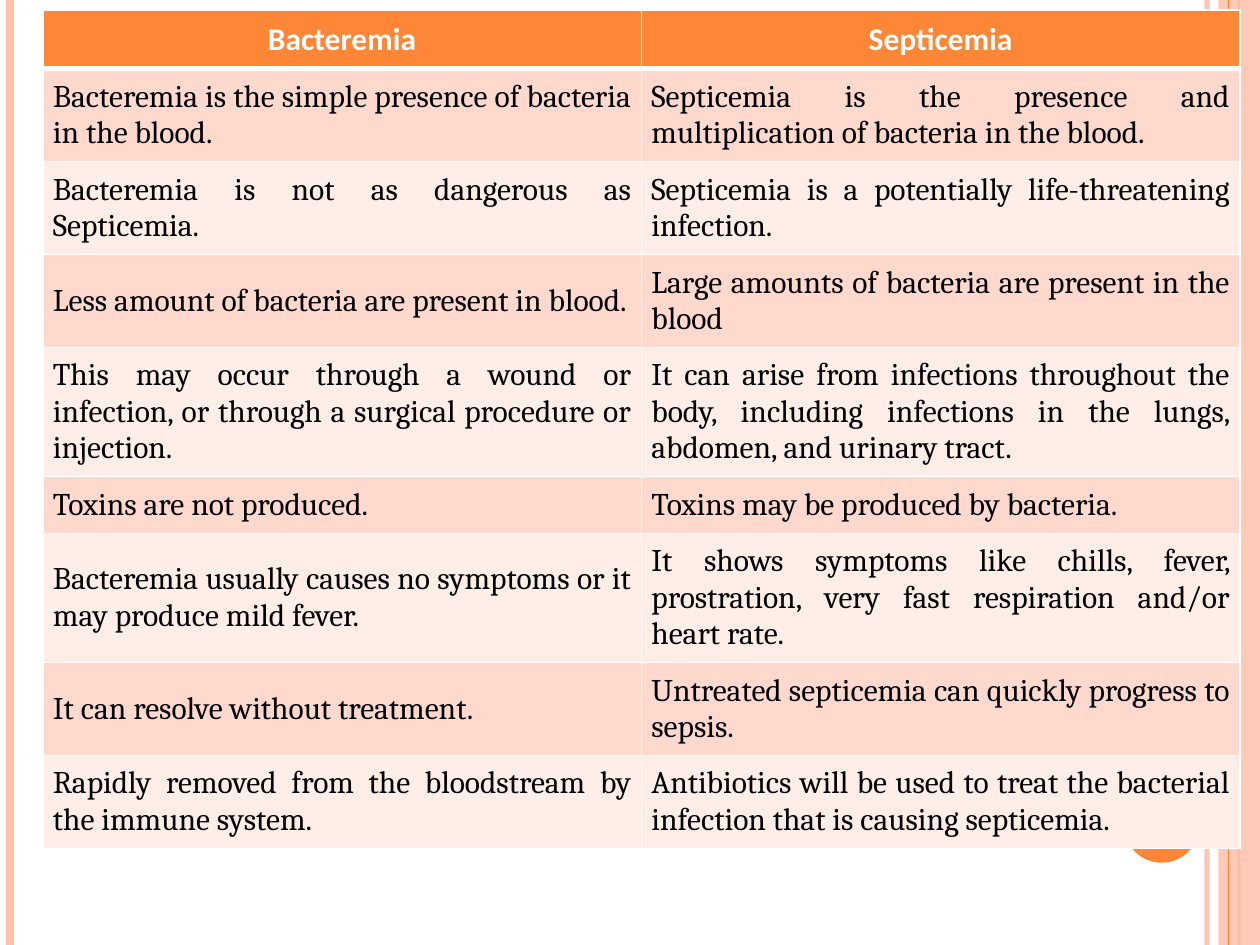
from lxml import etree
from pptx import Presentation
from pptx import util as u
from pptx.dml.color import RGBColor
from pptx.enum import shapes, text
from pptx.oxml import ns

W, H = u.Inches(10), u.Inches(7.5)
ORANGE, PEACH, WHITE, BLACK = "FE8637", "FEC3AE", "FFFFFF", "000000"
BANDS = ["FFD9CE", "FFEDE8"]
RULES = [(0.958, PEACH, 3, 93), (0.008, PEACH, 4.5, 100), (0.983, ORANGE, 1.5, 100)]
EDGE_RULE = (0.975, ORANGE, 0.75, 100)
ROWS = [
    ("Bacteremia", "Septicemia"),
    ("Bacteremia is the simple presence of bacteria in the blood.",
     "Septicemia is the presence and multiplication of bacteria in the blood."),
    ("Bacteremia is not as dangerous as Septicemia.",
     "Septicemia is a potentially life-threatening infection."),
    ("Less amount of bacteria are present in blood.",
     "Large amounts of bacteria are present in the blood"),
    ("This may occur through a wound or infection, or through a surgical procedure or injection.",
     "It can arise from infections throughout the body, including infections in the lungs, "
     "abdomen, and urinary tract."),
    ("Toxins are not produced.", "Toxins may be produced by bacteria."),
    ("Bacteremia usually causes no symptoms or it may produce mild fever.",
     "It shows symptoms like chills, fever, prostration, very fast respiration and/or heart rate."),
    ("It can resolve without treatment.",
     "Untreated septicemia can quickly progress to sepsis."),
    ("Rapidly removed from the bloodstream by the immune system.",
     "Antibiotics will be used to treat the bacterial infection that is causing septicemia."),
]


def rgb(color):
    return RGBColor.from_string(color)


def add(parent, tag, **attrs):
    return etree.SubElement(parent, ns.qn(tag), attrs)


def paint(fill, color, alpha=100):
    fill.solid()
    fill.fore_color.rgb = rgb(color)
    if alpha < 100:
        clr = fill._xPr.find(".//" + ns.qn("a:srgbClr"))
        add(clr, "a:alpha", val=str(alpha * 1000))


def add_rule(s, x, color, width, alpha):
    x = int(W * x)
    c = s.shapes.add_connector(shapes.MSO_CONNECTOR.STRAIGHT, x, 0, x, H)
    c.line.width = u.Pt(width)
    paint(c.line.fill, color, alpha)
    add(c._element.spPr, "a:effectLst")


def add_block(s, kind, x, y, w, h, color, alpha=100):
    sp = s.shapes.add_shape(kind, int(W * x), int(H * y), int(W * w), int(H * h))
    sp.shadow.inherit = False
    paint(sp.fill, color, alpha)
    sp.line.fill.background()


def set_borders(cell, widths):
    pr = cell._tc.get_or_add_tcPr()
    for i, (side, width) in enumerate(widths.items()):
        ln = etree.Element(ns.qn("a:ln" + side), w=str(u.Pt(width)))
        add(add(ln, "a:solidFill"), "a:srgbClr", val=WHITE)
        pr.insert(i, ln)


def fill_cell(cell, words, row):
    header = row == 0
    cell.text = words
    cell.vertical_anchor = text.MSO_ANCHOR.MIDDLE
    cell.margin_left = cell.margin_right = u.Inches(0.08)
    cell.margin_top = cell.margin_bottom = u.Inches(0.08)
    paint(cell.fill, ORANGE if header else BANDS[(row - 1) % 2])
    set_borders(cell, {"L": 1, "R": 1, "T": 3 if row == 1 else 1, "B": 3 if header else 1})
    p = cell.text_frame.paragraphs[0]
    p.alignment = text.PP_ALIGN.CENTER if header else text.PP_ALIGN.JUSTIFY
    p.font.size = u.Pt(18)
    p.font.name = "Calibri" if header else "Cambria"
    p.font.bold = header
    p.font.color.rgb = rgb(WHITE if header else BLACK)


def add_comparison(s, rows):
    frame = s.shapes.add_table(len(rows), 2, u.Inches(0.34), u.Inches(0.08),
                               int(W * 0.95), int(H * 0.96))
    for row in frame.table.rows:
        row.height = u.Inches(0.41)
    frame.height = int(H * 0.96)
    for i, pair in enumerate(rows):
        for j, words in enumerate(pair):
            fill_cell(frame.table.cell(i, j), words, i)


def main():
    prs = Presentation()
    prs.slide_width, prs.slide_height = W, H
    s = prs.slides.add_slide(prs.slide_layouts[6])
    paint(s.background.fill, WHITE)
    for rule in RULES:
        add_rule(s, *rule)
    add_block(s, shapes.MSO_SHAPE.RECTANGLE, 0.967, 0, 0.033, 1, PEACH, 87)
    add_rule(s, *EDGE_RULE)
    add_block(s, shapes.MSO_SHAPE.OVAL, 0.892, 0.833, 0.06, 0.08, ORANGE)
    add_comparison(s, ROWS)
    prs.save("out.pptx")


if __name__ == "__main__":
    main()
